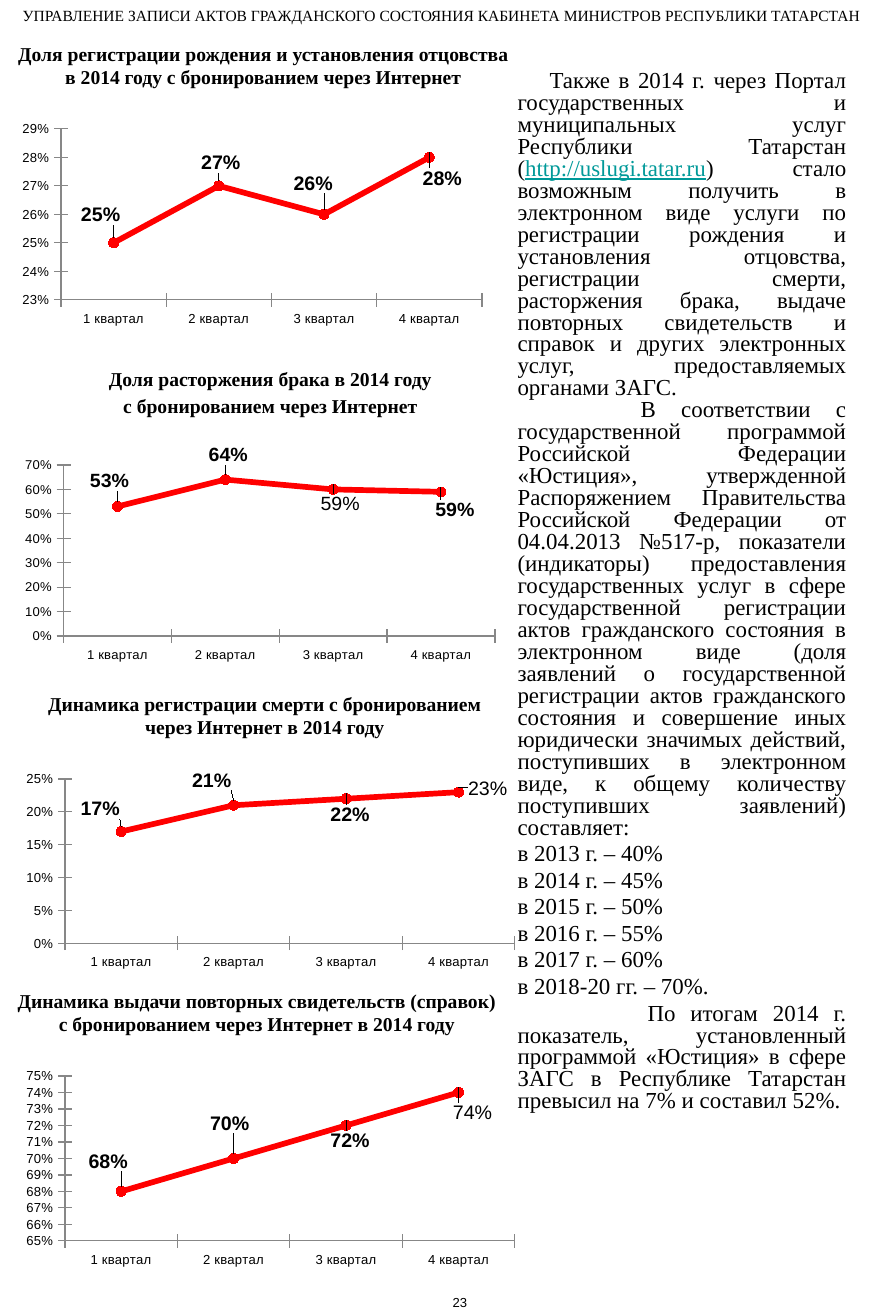
from lxml import etree
from pptx import Presentation
from pptx.chart.data import CategoryChartData
from pptx.dml.color import RGBColor
from pptx.enum.chart import XL_CHART_TYPE, XL_LABEL_POSITION, XL_MARKER_STYLE, XL_TICK_MARK
from pptx.enum.text import PP_ALIGN
from pptx.oxml.ns import qn
from pptx.util import Pt

PX = 7769  # EMU in one px
LEFT, CENTER, JUSTIFY = PP_ALIGN.LEFT, PP_ALIGN.CENTER, PP_ALIGN.JUSTIFY
LINE_MARKERS = XL_CHART_TYPE.LINE_MARKERS
ABOVE = XL_LABEL_POSITION.ABOVE
CIRCLE = XL_MARKER_STYLE.CIRCLE
CROSS = XL_TICK_MARK.CROSS
SERIF, SANS = "Times New Roman", "Arial"
BLACK, RED, GRAY, TEAL = "000000", "FF0000", "878787", "009999"
rgb = RGBColor.from_string


def add_text(box, paragraphs, size, font=SERIF, align=CENTER, bold=False, margin=0, before=0.2):
    """Add a text box; before is the space above a paragraph as a share of the size."""
    tf = s.shapes.add_textbox(*[v * PX for v in box]).text_frame
    tf.word_wrap = True
    for i, text in enumerate(paragraphs):
        p = tf.paragraphs[0] if i == 0 else tf.add_paragraph()
        p.text = text
        p.alignment = align
        p.space_before = Pt(size * before)
        p.font.size, p.font.name, p.font.bold = Pt(size), font, bold
        p.font.color.rgb = rgb(BLACK)
        p._p.get_or_add_pPr().set("marL", str(margin * PX))
    return tf


def set_layout(parent, index, **values):
    """Give a plot area or a data label a manual layout."""
    for old in parent.findall(qn("c:layout")):
        parent.remove(old)
    layout = etree.Element(qn("c:layout"))
    manual = etree.SubElement(layout, qn("c:manualLayout"))
    for name, value in values.items():
        etree.SubElement(manual, qn("c:" + name)).set("val", str(value))
    parent.insert(index, layout)


prs = Presentation()
prs.slide_width, prs.slide_height = 883 * PX, 1316 * PX
s = prs.slides.add_slide(prs.slide_layouts[6])

# Header and page number
add_text((0, 0, 883, 31), ["УПРАВЛЕНИЕ ЗАПИСИ АКТОВ ГРАЖДАНСКОГО СОСТОЯНИЯ КАБИНЕТА МИНИСТРОВ "
                           "РЕСПУБЛИКИ ТАТАРСТАН"], 9.5, before=0)
add_text((441, 1289, 46, 28), ["23"], 8, SANS, LEFT)

# Right column
portal_before = "Также в 2014 г. через Портал государственных и муниципальных услуг Республики Татарстан ("
portal_after = (") стало возможным получить в электронном виде услуги по регистрации рождения и "
                "установления отцовства, регистрации смерти, расторжения брака, выдаче повторных "
                "свидетельств и справок и других электронных услуг, предоставляемых органами ЗАГС.")
programme = ("В соответствии с государственной программой Российской Федерации «Юстиция», утвержденной "
             "Распоряжением Правительства Российской Федерации от 04.04.2013 №517-р, показатели "
             "(индикаторы) предоставления государственных услуг в сфере государственной регистрации "
             "актов гражданского состояния в электронном виде (доля заявлений о государственной "
             "регистрации актов гражданского состояния и совершение иных юридически значимых действий, "
             "поступивших в электронном виде, к общему количеству поступивших заявлений) составляет:")
targets = ["в 2013 г. – 40%", "в 2014 г. – 45%", "в 2015 г. – 50%", "в 2016 г. – 55%",
           "в 2017 г. – 60%", "в 2018-20 гг. – 70%."]
result = ("По итогам 2014 г. показатель, установленный программой «Юстиция» в сфере ЗАГС "
          "в Республике Татарстан превысил на 7% и составил 52%.")
tf = add_text((506, 65, 352, 1223), [portal_before, programme, *targets, result], 14, align=JUSTIFY)
for p in tf.paragraphs:
    p.line_spacing = 0.8
for i, indent in ((0, 32), (1, 123), (-1, 130)):
    tf.paragraphs[i]._p.pPr.set("indent", str(indent * PX))
for p in tf.paragraphs[:2]:
    p.space_before = Pt(0)
p = tf.paragraphs[0]
r = p.add_run()
r.text = "http://uslugi.tatar.ru"
r.font.underline = True
r.font.color.rgb = rgb(TEAL)
p.add_run().text = portal_after

# Chart titles
titles = [
    ((-22, 36, 547, 78), ["Доля регистрации рождения и установления отцовства "
                          "в 2014 году с бронированием через Интернет"]),
    ((15, 361, 487, 65), ["Доля расторжения брака в 2014 году", "с бронированием через Интернет"]),
    ((0, 686, 506, 55), ["Динамика регистрации смерти с бронированием через Интернет в 2014 году"]),
    ((-68, 983, 626, 55), ["Динамика выдачи повторных свидетельств (справок)\v"
                           "с бронированием через Интернет в 2014 году"]),
]
for box, lines in titles:
    add_text(box, lines, 12, bold=True, margin=24)

# Charts: box, plot area, values, axis (low, high, step), label shifts, point with a typed label
charts = [
    ((0, 111, 506, 241), (61, 129, 421, 171), (0.25, 0.27, 0.26, 0.28), (0.23, 0.29, 0.01),
     ((-13, -8), (2, -3), (-11, -11), (13, 41)), None),
    ((25, 445, 472, 246), (63, 460, 432, 175), (0.53, 0.64, 0.6, 0.59), (0, 0.7, 0.1),
     ((-8, -6), (3, -5), (7, 35), (14, 38)), (2, "59%")),
    ((25, 770, 491, 232), (65, 778, 450, 165), (0.17, 0.21, 0.22, 0.23), (0, 0.25, 0.05),
     ((-21, -3), (-22, -5), (4, 36), (29, 17)), (3, "23%")),
    ((25, 1068, 491, 232), (65, 1076, 450, 165), (0.68, 0.7, 0.72, 0.74), (0.65, 0.75, 0.01),
     ((-13, -10), (-4, -15), (4, 35), (14, 40)), (3, "74%")),
]
for box, plot, values, (low, high, step), shifts, typed in charts:
    x, y, w, h = box
    data = CategoryChartData(number_format="0%")
    data.categories = [f"{n} квартал" for n in range(1, 5)]
    data.add_series("Series 1", values)
    chart = s.shapes.add_chart(LINE_MARKERS, *[v * PX for v in box], data).chart
    chart.has_title = chart.has_legend = False
    chart.font.name, chart.font.size = SANS, Pt(18)
    chart.font.color.rgb = rgb(BLACK)
    set_layout(chart._chartSpace.chart.plotArea, 0, layoutTarget="inner", xMode="edge", yMode="edge",
               x=round((plot[0] - x) / w, 4), y=round((plot[1] - y) / h, 4),
               w=round(plot[2] / w, 4), h=round(plot[3] / h, 4))

    for axis in (chart.category_axis, chart.value_axis):
        axis.has_major_gridlines = False
        axis.major_tick_mark = CROSS
        axis.tick_labels.font.size = Pt(8)
        axis.format.line.color.rgb = rgb(GRAY)
    axis = chart.value_axis
    axis.minimum_scale, axis.maximum_scale, axis.major_unit = low, high, step
    axis.tick_labels.number_format = "0%"
    axis.tick_labels.number_format_is_linked = False

    chart.plots[0].vary_by_categories = False
    series = chart.plots[0].series[0]
    series.smooth = False
    series.format.line.color.rgb = rgb(RED)
    series.format.line.width = Pt(3.5)
    series.marker.style, series.marker.size = CIRCLE, 6
    series.marker.format.fill.solid()
    series.marker.format.fill.fore_color.rgb = rgb(RED)
    series.marker.format.line.color.rgb = rgb(RED)
    labels = series.data_labels
    labels.show_value = True
    labels.number_format, labels.number_format_is_linked = "0%", False
    labels.font.size, labels.font.bold = Pt(12), True

    for i, (dx, dy) in enumerate(shifts):
        label = series.points[i].data_label
        if typed and typed[0] == i:
            p = label.text_frame.paragraphs[0]
            r = p.add_run()
            r.text = typed[1]
            r.font.size, r.font.bold = Pt(12), False
        else:
            label.font.size, label.font.bold = Pt(12), True
        label.position = ABOVE
        set_layout(labels._element.findall(qn("c:dLbl"))[i], 1, x=round(dx / w, 4), y=round(dy / h, 4))

prs.save("out.pptx")
